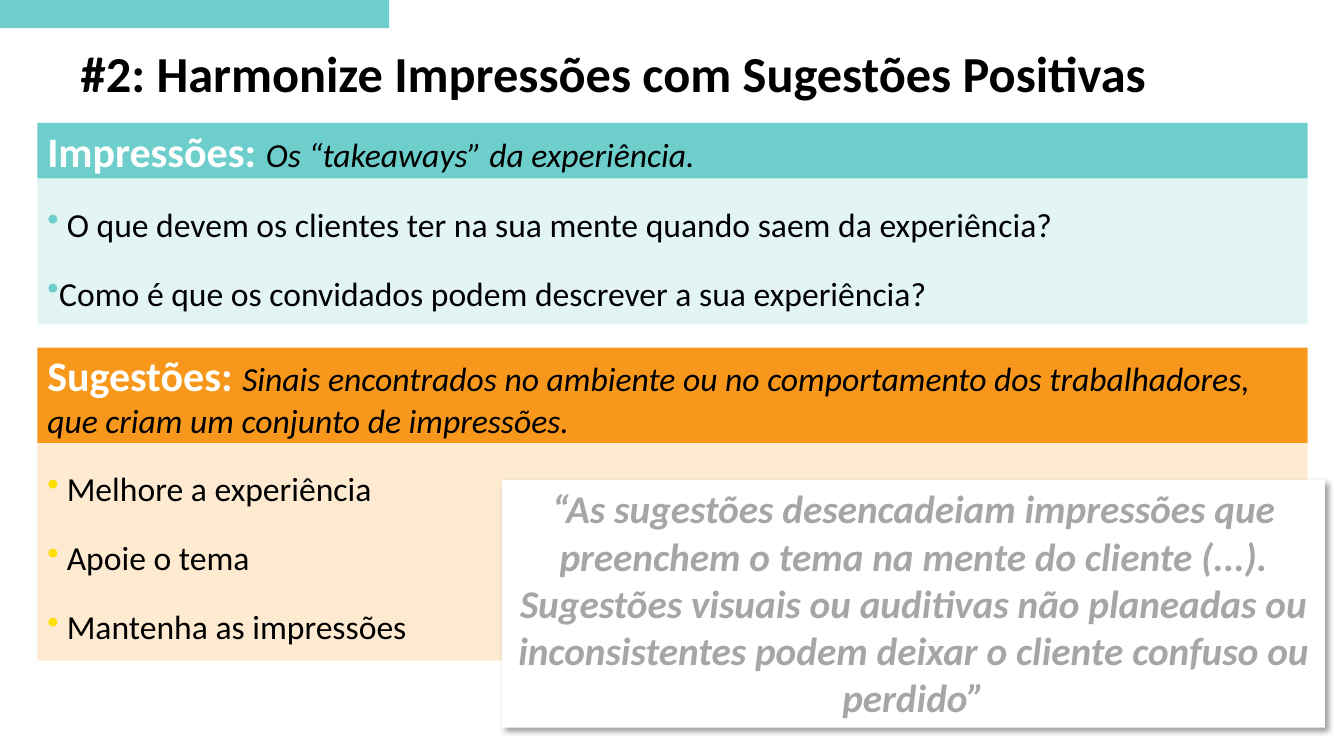
from lxml import etree
from pptx import Presentation
from pptx import util as u
from pptx.dml.color import RGBColor
from pptx.enum import shapes, text
from pptx.oxml.ns import qn

TEAL, ORANGE, YELLOW = "6ECECB", "F7981D", "FDDE00"
BLACK, WHITE, GREY = "000000", "FFFFFF", "A6A6A6"
LEFT, WIDTH = 2.78, 94.52


def color(hex_code):
    return RGBColor.from_string(hex_code)


def add_element(parent, tag, **attributes):
    return etree.SubElement(parent, qn(tag), attributes)


class SlideBuilder:
    """Places elements on one slide; lengths are percent of its width and height."""

    font_name = "Calibri"

    def __init__(self, presentation):
        self.column = presentation.slide_width / 100
        self.row = presentation.slide_height / 100
        self.slide = presentation.slides.add_slide(presentation.slide_layouts[5])

    def bounds(self, left, top, width, height):
        return (u.Emu(round(left * self.column)), u.Emu(round(top * self.row)),
                u.Emu(round(width * self.column)), u.Emu(round(height * self.row)))

    def style(self, font, size, hex_code, bold=False, italic=False):
        font.name, font.size = self.font_name, u.Pt(size)
        font.bold, font.italic = bold, italic
        font.color.rgb = color(hex_code)

    def title(self, wording, *box):
        title = self.slide.shapes.title
        title.left, title.top, title.width, title.height = self.bounds(*box)
        frame = title.text_frame
        frame.text = wording
        frame.word_wrap = True
        frame.auto_size = text.MSO_AUTO_SIZE.NONE
        frame.vertical_anchor = text.MSO_ANCHOR.MIDDLE
        paragraph = frame.paragraphs[0]
        paragraph.alignment = text.PP_ALIGN.LEFT
        paragraph.line_spacing = 0.9
        self.style(paragraph.font, 36, BLACK, bold=True)

    def rectangle(self, fill, *box, opacity=100, anchor=text.MSO_ANCHOR.TOP):
        shape = self.slide.shapes.add_shape(
            shapes.MSO_SHAPE.RECTANGLE, *self.bounds(*box))
        shape.shadow.inherit = False
        shape.line.fill.background()
        shape.fill.solid()
        shape.fill.fore_color.rgb = color(fill)
        if opacity < 100:
            fill_color = shape._element.spPr.find(".//" + qn("a:srgbClr"))
            add_element(fill_color, "a:alpha", val=str(opacity * 1000))
        shape.text_frame.word_wrap = True
        shape.text_frame.vertical_anchor = anchor
        return shape

    def heading(self, fill, term, definition, top, height):
        shape = self.rectangle(fill, LEFT, top, WIDTH, height,
                               anchor=text.MSO_ANCHOR.MIDDLE)
        paragraph = shape.text_frame.paragraphs[0]
        paragraph.alignment = text.PP_ALIGN.LEFT
        for wording, size, hex_code, is_term in (
                (term + " ", 30, WHITE, True), (definition, 24, BLACK, False)):
            run = paragraph.add_run()
            run.text = wording
            self.style(run.font, size, hex_code, bold=is_term, italic=not is_term)

    def bullet_panel(self, fill, bullet_color, items, top, height):
        shape = self.rectangle(fill, LEFT, top, WIDTH, height, opacity=20)
        frame = shape.text_frame
        frame.text = "\n".join(items)
        for paragraph in frame.paragraphs:
            properties = paragraph._p.get_or_add_pPr()
            add_element(add_element(properties, "a:buClr"), "a:srgbClr", val=bullet_color)
            add_element(properties, "a:buChar", char="•")
            paragraph.alignment = text.PP_ALIGN.LEFT
            paragraph.line_spacing = 1.5
            paragraph.space_after = u.Pt(6)
            self.style(paragraph.font, 24, BLACK)

    def section(self, fill, bullet_color, term, definition, items, top, heights):
        """Stacks a heading on its bullet panel; heights lists both."""
        heading_height, panel_height = heights
        self.heading(fill, term, definition, top, heading_height)
        self.bullet_panel(fill, bullet_color, items, top + heading_height, panel_height)

    def quote(self, wording, *box):
        shape = self.rectangle(WHITE, *box)
        shadow = add_element(
            shape._element.spPr.find(qn("a:effectLst")), "a:outerShdw",
            blurRad=str(u.Pt(4)), dist=str(u.Pt(3)), dir=str(45 * 60000),
            algn="tl", rotWithShape="0")
        shade = add_element(shadow, "a:srgbClr", val=BLACK)
        add_element(shade, "a:alpha", val="40000")
        frame = shape.text_frame
        frame.text = wording
        frame.auto_size = text.MSO_AUTO_SIZE.SHAPE_TO_FIT_TEXT
        paragraph = frame.paragraphs[0]
        paragraph.alignment = text.PP_ALIGN.CENTER
        self.style(paragraph.font, 28, GREY, bold=True, italic=True)


def main():
    presentation = Presentation()
    presentation.slide_width = u.Inches(13.33)
    presentation.slide_height = u.Inches(7.5)
    builder = SlideBuilder(presentation)
    builder.rectangle(TEAL, 0, 0, 28.96, 3.73)
    builder.title("#2: Harmonize Impressões com Sugestões Positivas",
                  5.25, 5.07, 91.9, 10.13)
    builder.section(
        TEAL, TEAL, "Impressões:", "Os “takeaways” da experiência.",
        [" O que devem os clientes ter na sua mente quando saem da experiência?",
         "Como é que os convidados podem descrever a sua experiência?"],
        16.27, (7.33, 19.33))
    builder.section(
        ORANGE, YELLOW, "Sugestões:",
        "Sinais encontrados no ambiente ou no comportamento dos trabalhadores, "
        "que criam um conjunto de impressões.",
        [" Melhore a experiência", " Apoie o tema", " Mantenha as impressões"],
        46, (12.6, 28.8))
    builder.quote(
        "“As sugestões desencadeiam impressões que preenchem o tema na mente do "
        "cliente (...). Sugestões visuais ou auditivas não planeadas ou "
        "inconsistentes podem deixar o cliente confuso ou perdido”",
        37.36, 63.47, 61.22, 32.8)
    presentation.save("out.pptx")


if __name__ == "__main__":
    main()
